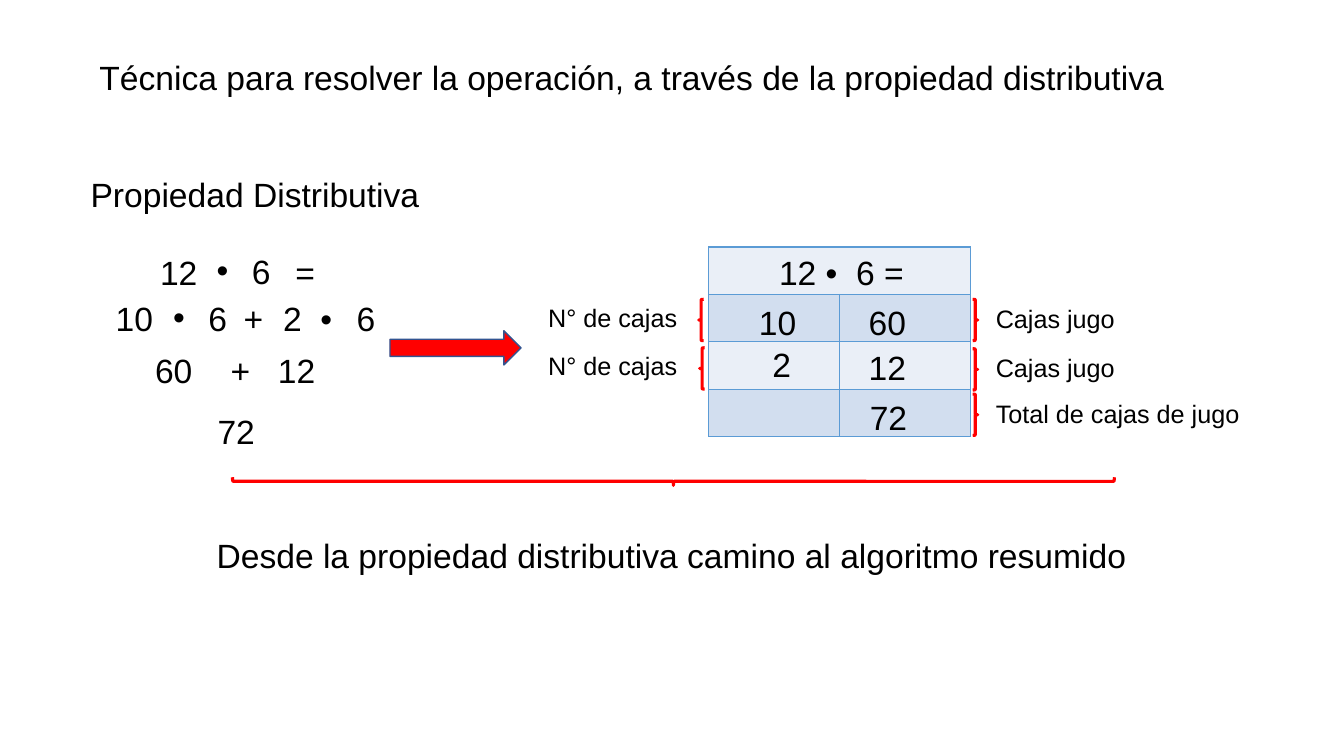
from dataclasses import dataclass

from lxml.etree import SubElement
from pptx import Presentation
from pptx.dml.color import RGBColor
from pptx.enum.shapes import MSO_SHAPE
from pptx.enum.text import MSO_AUTO_SIZE, PP_ALIGN
from pptx.oxml.ns import qn
from pptx.util import Pt

COLORS = {
    "text": "000000",
    "red": "FF0000",
    "arrow_line": "325491",
    "border": "5B9BD5",
    "light_row": "EAEFF7",
    "dark_row": "D2DEEF",
}
FONT = "Arial"
LABEL_SIZE = 18


@dataclass
class Label:
    text: str
    left: float
    top: float
    width: float
    size: float = 24
    align: PP_ALIGN = PP_ALIGN.LEFT


@dataclass
class Brace:
    left: float
    top: float
    width: float = 3.6
    height: float = 29.5
    rotation: float = 0


HEADINGS = [
    Label("Técnica para resolver la operación, a través de la propiedad distributiva", 64, 37.4, 792),
    Label("Propiedad Distributiva", 57.6, 121, 267),
    Label("Desde la propiedad distributiva camino al algoritmo resumido", 147.6, 378.7, 705),
]

# Worked steps on the left
STEPS = [
    Label("12", 107.3, 176.4, 42),
    Label("•", 147.6, 174.2, 22.3),
    Label("6", 172.8, 175.7, 31),
    Label("=", 203.8, 176.4, 22.3),
    Label("10", 75.6, 209.2, 42),
    Label("•", 116.6, 208.1, 22.3),
    Label("6", 141.8, 209.5, 31),
    Label("+", 167, 209.5, 24.5),
    Label("2", 195.1, 209.5, 31),
    Label("•", 221.8, 209.5, 19.4),
    Label("6", 247.7, 209.2, 31),
    Label("60", 103.7, 246.2, 46.8),
    Label("+", 157.7, 246.2, 24.5),
    Label("12", 191.5, 246.2, 44),
    Label("72", 148.3, 290.2, 46),
]

# Numbers laid over the table
TABLE_NUMBERS = [
    Label("12 •  6 =", 549.4, 176.4, 115.2),
    Label("10", 535, 212.4, 47.5),
    Label("60", 613.4, 212.4, 42),
    Label("2", 542.9, 241.9, 31, align=PP_ALIGN.CENTER),
    Label("12", 613.4, 244.1, 47.5),
    Label("72", 614.2, 280.1, 47.5),
]

ROW_NAMES = [
    Label("N° de cajas", 384.5, 212.4, 113, LABEL_SIZE),
    Label("N° de cajas", 384.5, 247, 113, LABEL_SIZE),
    Label("Cajas jugo", 704.2, 213.1, 103, LABEL_SIZE),
    Label("Cajas jugo", 704.2, 248.4, 103, LABEL_SIZE),
    Label("Total de cajas de jugo", 704.2, 280.8, 194.4, LABEL_SIZE),
]

BRACES = [
    Brace(694.8, 213.8),
    Brace(694.8, 249.1),
    Brace(694.8, 281.5),
    Brace(499, 213.8, rotation=180),
    Brace(499.7, 248.4, rotation=180),
    Brace(478.1, 28.8, 5.8, 630, 90),
]


def color(name: str) -> RGBColor:
    return RGBColor.from_string(COLORS[name])


def add_label(page, label: Label) -> None:
    height = label.size * 1.2 + 7.2
    box = page.shapes.add_textbox(Pt(label.left), Pt(label.top), Pt(label.width), Pt(height))
    frame = box.text_frame
    frame.word_wrap = True
    frame.auto_size = MSO_AUTO_SIZE.SHAPE_TO_FIT_TEXT
    para = frame.paragraphs[0]
    para.text = label.text
    para.alignment = label.align
    para.font.name = FONT
    para.font.size = Pt(label.size)
    para.font.color.rgb = color("text")


def add_brace(page, brace: Brace) -> None:
    shape = page.shapes.add_shape(
        MSO_SHAPE.RIGHT_BRACE, Pt(brace.left), Pt(brace.top), Pt(brace.width), Pt(brace.height)
    )
    shape.rotation = brace.rotation
    shape.shadow.inherit = False
    shape.fill.background()
    shape.line.color.rgb = color("red")
    shape.line.width = Pt(2.25)


def add_arrow(page) -> None:
    arrow = page.shapes.add_shape(MSO_SHAPE.RIGHT_ARROW, Pt(278.6), Pt(236.2), Pt(93.6), Pt(24.5))
    arrow.shadow.inherit = False
    arrow.fill.solid()
    arrow.fill.fore_color.rgb = color("red")
    arrow.line.color.rgb = color("arrow_line")
    arrow.line.width = Pt(1)


def style_cell(cell, fill_name: str) -> None:
    # Borders come before the fill in the cell properties
    properties = cell._tc.get_or_add_tcPr()
    for side in ("a:lnL", "a:lnR", "a:lnT", "a:lnB"):
        border = SubElement(properties, qn(side), w=str(Pt(1)))
        solid = SubElement(border, qn("a:solidFill"))
        SubElement(solid, qn("a:srgbClr"), val=COLORS["border"])
    cell.fill.solid()
    cell.fill.fore_color.rgb = color(fill_name)


def add_grid(page) -> None:
    row_height, column_width = 33.9, 93.4
    table = page.shapes.add_table(
        4, 2, Pt(506.2), Pt(176.4), Pt(2 * column_width), Pt(4 * row_height)
    ).table
    for column in table.columns:
        column.width = Pt(column_width)
    for index, row in enumerate(table.rows):
        row.height = Pt(row_height)
        for cell in row.cells:
            style_cell(cell, "dark_row" if index % 2 else "light_row")
    table.cell(0, 0).merge(table.cell(0, 1))


def main() -> None:
    deck = Presentation()
    deck.slide_width, deck.slide_height = Pt(960), Pt(540)
    page = deck.slides.add_slide(deck.slide_layouts[6])

    add_grid(page)
    for label in TABLE_NUMBERS + ROW_NAMES + STEPS + HEADINGS:
        add_label(page, label)
    add_arrow(page)
    for brace in BRACES:
        add_brace(page, brace)

    deck.save("out.pptx")


if __name__ == "__main__":
    main()
